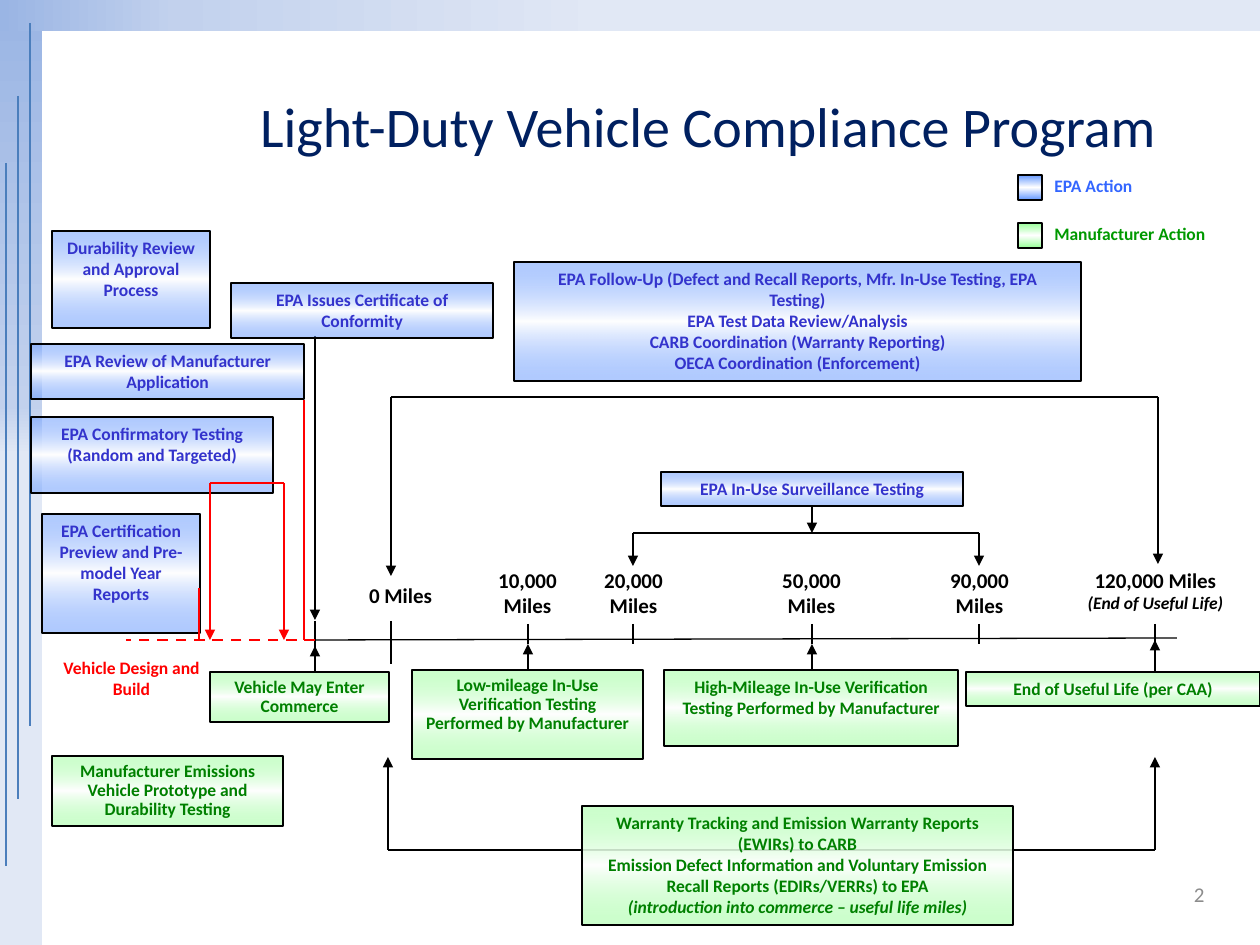
"""Build the light-duty vehicle compliance timeline slide."""
from lxml import etree
from pptx import Presentation, util as u
from pptx.dml.color import RGBColor
from pptx.enum import dml, shapes, text
from pptx.oxml import ns

PX = 7257
NAVY = RGBColor(0x00, 0x20, 0x60)
BLACK = RGBColor(0x00, 0x00, 0x00)
WHITE = RGBColor(0xFF, 0xFF, 0xFF)
RED = RGBColor(0xFF, 0x00, 0x00)
GRAY = RGBColor(0x8C, 0x8C, 0x8C)
RULE_BLUE = RGBColor(0x4B, 0x7E, 0xBC)
EPA_FILL = RGBColor(0x66, 0x99, 0xFF)
EPA_TEXT = RGBColor(0x33, 0x33, 0xCC)
EPA_LEGEND = RGBColor(0x33, 0x66, 0xFF)
MAKER_FILL = RGBColor(0x99, 0xFF, 0x99)
MAKER_TEXT = RGBColor(0x00, 0x80, 0x00)
MAKER_LEGEND = RGBColor(0x00, 0x99, 0x00)
BAND_DARK = RGBColor(0x9A, 0xB5, 0xE4)
BAND_MID = RGBColor(0xC2, 0xD1, 0xED)
BAND_LIGHT = RGBColor(0xE1, 0xE8, 0xF5)

presentation = Presentation()
presentation.slide_width = u.Inches(10)
presentation.slide_height = u.Inches(7.5)
slide = presentation.slides.add_slide(presentation.slide_layouts[5])


def add_gradient_box(box, stops, angle, line_color=None):
    shape = slide.shapes.add_shape(shapes.MSO_SHAPE.RECTANGLE, *(v * PX for v in box))
    shape.shadow.inherit = False
    if line_color is None:
        shape.line.fill.background()
    else:
        shape.line.color.rgb = line_color
        shape.line.width = u.Pt(0.75)
    gradient = etree.Element(ns.qn("a:gradFill"), rotWithShape="1")
    stop_list = etree.SubElement(gradient, ns.qn("a:gsLst"))
    for position, color, alpha in stops:
        stop = etree.SubElement(stop_list, ns.qn("a:gs"), pos=str(position * 1000))
        color_element = etree.SubElement(stop, ns.qn("a:srgbClr"), val=str(color))
        if alpha < 100:
            etree.SubElement(color_element, ns.qn("a:alpha"), val=str(alpha * 1000))
    etree.SubElement(gradient, ns.qn("a:lin"), ang=str(angle * 60000), scaled="0")
    shape._element.spPr.find(ns.qn("a:prstGeom")).addnext(gradient)
    return shape


def write_text(shape, paragraphs, color, size=10, bold=True, spacing=None,
               align=text.PP_ALIGN.CENTER, anchor=text.MSO_ANCHOR.TOP):
    frame = shape.text_frame
    frame.word_wrap = True
    frame.vertical_anchor = anchor
    for index, content in enumerate(paragraphs):
        paragraph = frame.paragraphs[0] if index == 0 else frame.add_paragraph()
        paragraph.text = content
        paragraph.alignment = align
        paragraph.line_spacing = spacing
        italic = content.startswith("(")
        font_format = {"name": "Calibri", "size": u.Pt(10 if italic else size),
                       "bold": bold, "italic": italic}
        for run in paragraph.runs:
            for name, value in font_format.items():
                setattr(run.font, name, value)
            run.font.color.rgb = color


for box, middle, angle in (((0, 0, 42, 945), 43, 90), ((0, 0, 1260, 31), 14, 0)):
    add_gradient_box(box, [(0, BAND_DARK, 100), (middle, BAND_MID, 100),
                           (48, BAND_LIGHT, 100)], angle)

margin_rules = [(x, top, x, top + 703, False) for x, top in ((30, 23), (18, 96), (6, 163))]

ticks = [(x, 624, x, 644, False) for x in (528, 633, 812, 979, 1155)]
ticks += [(x, 621, x, 664, False) for x in (315, 391)]
timeline = ticks + [
    (315, 640, 1177, 638, False),
    (315, 336, 315, 620, True),
    (391, 397, 1158, 397, False),
    (391, 397, 391, 576, True),
    (1158, 397, 1158, 564, True),
    (812, 507, 812, 533, True),
    (633, 533, 979, 533, False),
    (633, 533, 633, 566, True),
    (979, 533, 979, 566, True),
    (315, 672, 315, 646, True),
    (528, 670, 528, 644, True),
    (812, 670, 812, 644, True),
    (1155, 672, 1155, 640, True),
    (388, 850, 1155, 850, False),
    (388, 850, 388, 757, True),
    (1155, 850, 1155, 757, True),
]
design_phase = [
    (199, 640, 199, 588, False),
    (304, 400, 304, 640, False),
    (210, 483, 284, 483, False),
    (210, 483, 210, 640, True),
    (284, 483, 284, 640, True),
]
design_baseline = [(315, 640, 126, 640, False)]

epa_boxes = [
    ((514, 262, 567, 119), ["EPA Follow-Up (Defect and Recall Reports, Mfr. In-Use Testing, EPA\vTesting)",
                            "EPA Test Data Review/Analysis",
                            "CARB Coordination (Warranty Reporting)",
                            "OECA Coordination (Enforcement)"], None),
    ((661, 472, 302, 34), ["EPA In-Use Surveillance Testing"], None),
    ((42, 514, 158, 119), ["EPA Certification Preview and Pre-model Year Reports"], None),
    ((31, 417, 242, 76), ["EPA Confirmatory Testing (Random and Targeted)"], None),
    ((31, 344, 273, 55), ["EPA Review of Manufacturer Application"], None),
    ((231, 283, 262, 55), ["EPA Issues Certificate of Conformity"], None),
    ((52, 231, 158, 97), ["Durability Review and Approval Process"], None),
]
maker_boxes = [
    ((412, 670, 231, 89), ["Low-mileage In-Use Verification Testing Performed by Manufacturer"], 0.9),
    ((664, 670, 294, 76), ["High-Mileage In-Use Verification Testing Performed by Manufacturer"], None),
    ((582, 806, 431, 119), ["Warranty Tracking and Emission Warranty Reports (EWIRs) to CARB",
                            "Emission Defect Information and Voluntary Emission Recall Reports (EDIRs/VERRs) to EPA",
                            "(introduction into commerce – useful life miles)"], None),
    ((52, 756, 231, 70), ["Manufacturer Emissions Vehicle Prototype and Durability Testing"], 0.9),
    ((966, 672, 294, 34), ["End of Useful Life (per CAA)"], None),
    ((210, 672, 179, 50), ["Vehicle May Enter Commerce"], 0.9),
]

line_groups = [(margin_rules, RULE_BLUE, 0.75, None), (timeline, BLACK, 0.75, None),
               (design_baseline, RED, 1.5, dml.MSO_LINE.DASH),
               (design_phase, RED, 0.75, None)]
for lines, color, width, dash in line_groups:
    if lines is design_phase:
        for boxes, fill, text_color, alpha in ((epa_boxes, EPA_FILL, EPA_TEXT, 51),
                                               (maker_boxes, MAKER_FILL, MAKER_TEXT, 49)):
            stops = [(0, fill, alpha), (50, WHITE, 100), (100, fill, alpha)]
            for box, paragraphs, spacing in boxes:
                shape = add_gradient_box(box, stops, 90, BLACK)
                write_text(shape, paragraphs, text_color, spacing=spacing)
    for *ends, arrow in lines:
        connector = slide.shapes.add_connector(shapes.MSO_CONNECTOR.STRAIGHT,
                                               *(v * PX for v in ends))
        connector.line.color.rgb = color
        connector.line.width = u.Pt(width)
        if dash:
            connector.line.dash_style = dash
        properties = connector._element.spPr
        if arrow:
            etree.SubElement(properties.find(ns.qn("a:ln")), ns.qn("a:tailEnd"), type="triangle")
        etree.SubElement(properties, ns.qn("a:effectLst"))

legend = [(175, "EPA Action", EPA_FILL, EPA_LEGEND),
          (223, "Manufacturer Action", MAKER_FILL, MAKER_LEGEND)]
for top, label, fill, color in legend:
    add_gradient_box((1018, top, 24, 25), [(0, fill, 100), (50, WHITE, 100), (100, fill, 100)],
                     90, BLACK)
    shape = slide.shapes.add_textbox(*(v * PX for v in (1042, top - 6, 197, 34)))
    write_text(shape, [label], color, align=text.PP_ALIGN.LEFT)

labels = [((x, 561, 105, 63), [f"{miles} Miles"], BLACK, 12)
          for x, miles in ((475, "10,000"), (581, "20,000"), (759, "50,000"), (927, "90,000"))]
labels += [
    ((339, 576, 123, 38), ["0 Miles"], BLACK, 12),
    ((1061, 561, 189, 59), ["120,000 Miles", "(End of Useful Life)"], BLACK, 12),
    ((42, 651, 179, 55), ["Vehicle Design and Build"], RED, 10),
]
for box, paragraphs, color, size in labels:
    shape = slide.shapes.add_textbox(*(v * PX for v in box))
    write_text(shape, paragraphs, color, size)

page_number = slide.shapes.add_textbox(*(v * PX for v in (924, 861, 293, 66)))
write_text(page_number, ["2"], GRAY, 12, bold=False, align=text.PP_ALIGN.RIGHT,
           anchor=text.MSO_ANCHOR.MIDDLE)

title = slide.shapes.title
title_format = {"left": 168, "top": 73, "width": 1081, "height": 158}
for name, value in title_format.items():
    setattr(title, name, value * PX)
title.text_frame.auto_size = text.MSO_AUTO_SIZE.NONE
title.text_frame.margin_bottom = 60 * PX
write_text(title, ["Light-Duty Vehicle Compliance Program"], NAVY, 32, bold=False,
           anchor=text.MSO_ANCHOR.MIDDLE)

presentation.save("out.pptx")
